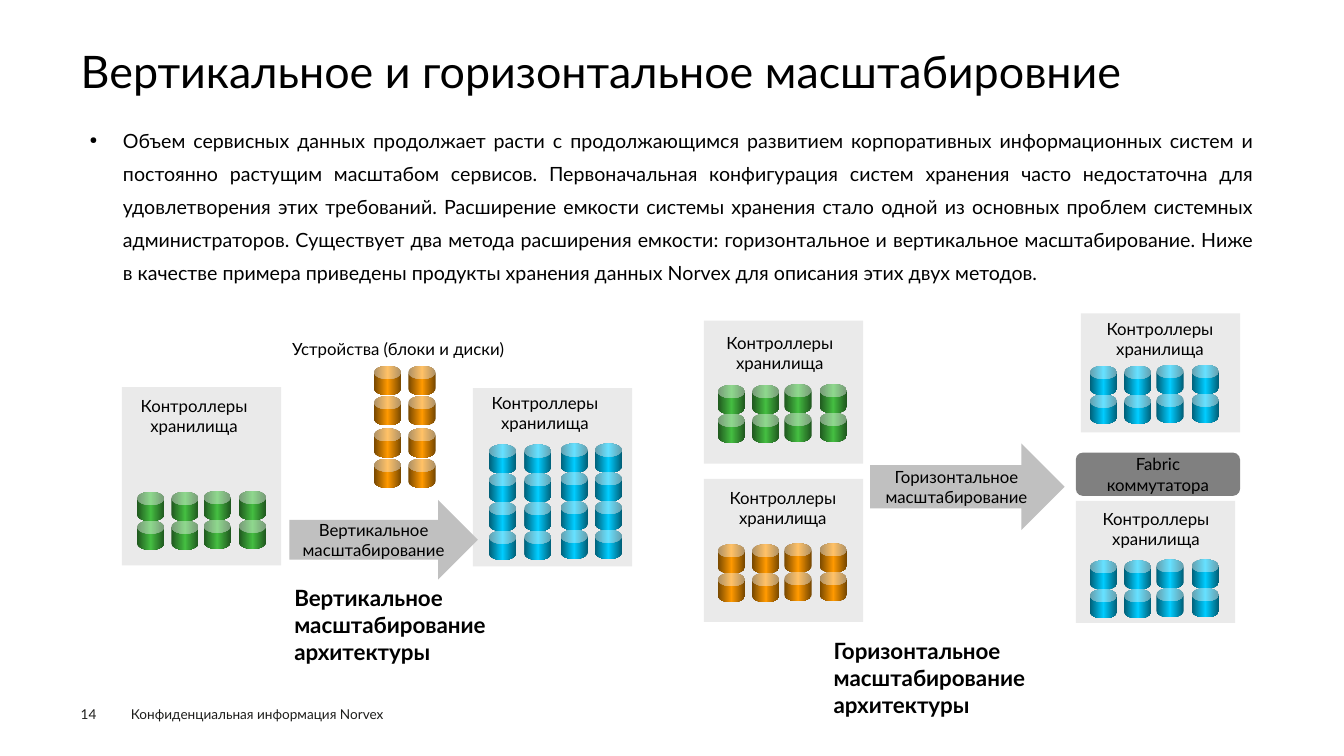
from copy import deepcopy

from lxml import etree
from pptx import Presentation
from pptx import util as u
from pptx.dml.color import RGBColor
from pptx.enum import shapes, text
from pptx.oxml.ns import qn

COLOURS = {
    "black": "000000", "footer": "1D1D1B", "panel": "EAEAEA", "arrow": "C0C0C0", "switch": "808080",
    "green": "44BD41", "dark green": "1F571E",
    "orange": "FF9900", "dark orange": "764700",
    "blue": "00CCFF", "dark blue": "005E76",
}
CONTROLLERS = "Контроллеры хранилища"
SUMMARY = (
    "Объем сервисных данных продолжает расти с продолжающимся развитием корпоративных "
    "информационных систем и постоянно растущим масштабом сервисов. Первоначальная конфигурация "
    "систем хранения часто недостаточна для удовлетворения этих требований. Расширение емкости "
    "системы хранения стало одной из основных проблем системных администраторов. Существует два "
    "метода расширения емкости: горизонтальное и вертикальное масштабирование. Ниже в качестве "
    "примера приведены продукты хранения данных Norvex для описания этих двух методов."
)
NARROW = (0, 0.34, 0.66, 1.01)
WIDE = (0, 0.35, 0.71, 1.05)
PANELS = [
    ((1.21, 3.84, 1.58, 1.77), (1.25, 3.88), (1.36, 4.88), NARROW, 2, "green"),
    ((4.69, 3.85, 1.58, 1.77), (4.73, 3.85), (4.85, 4.41), WIDE, 4, "blue"),
    ((6.98, 3.18, 1.58, 1.42), (7.06, 3.25), (7.12, 3.82), NARROW, 2, "green"),
    ((6.98, 4.75, 1.58, 1.42), (7.09, 4.79), (7.12, 5.4), NARROW, 2, "orange"),
    ((10.72, 3.11, 1.58, 1.18), (10.83, 3.11), (10.81, 3.63), NARROW, 2, "blue"),
    ((10.67, 4.97, 1.58, 1.21), (10.79, 5), (10.81, 5.56), NARROW, 2, "blue"),
]


def colour_of(name):
    """Return the named colour."""
    return RGBColor.from_string(COLOURS[name])


def write(frame, words, size=12, colour="black", bold=False, align="LEFT", anchor="TOP",
          insets=(0.1, 0.05), spacing=None, bullet=None):
    """Fill a text frame with one formatted paragraph."""
    frame.word_wrap = True
    frame.auto_size = text.MSO_AUTO_SIZE.NONE
    frame.vertical_anchor = getattr(text.MSO_ANCHOR, anchor)
    frame.margin_left = frame.margin_right = u.Inches(insets[0])
    frame.margin_top = frame.margin_bottom = u.Inches(insets[1])
    para = frame.paragraphs[0]
    para.alignment = getattr(text.PP_ALIGN, align)
    if spacing:
        para.line_spacing = spacing
    if bullet:
        properties = para._p.get_or_add_pPr()
        properties.set("marL", str(u.Inches(0.33)))
        properties.set("indent", str(u.Inches(-0.33)))
        etree.SubElement(properties, qn("a:buSzPct")).set("val", "50000")
        etree.SubElement(properties, qn("a:buChar")).set("char", bullet)
    span = para.add_run()
    span.text = words
    span.font.name = "Lato"
    span.font.size = u.Pt(size)
    span.font.bold = bold
    span.font.color.rgb = colour_of(colour)


class Page:
    """Draw styled elements on one slide."""

    def __init__(self, deck):
        """Add a title-only slide."""
        self.slide = deck.slides.add_slide(deck.slide_layouts[5])

    def title(self, words, place):
        """Place and format the title."""
        box = self.slide.shapes.title
        box.left, box.top, box.width, box.height = map(u.Inches, place)
        write(box.text_frame, words, size=32, insets=(0, 0), spacing=0.9)

    def label(self, words, place, **style):
        """Add a text box."""
        box = self.slide.shapes.add_textbox(*map(u.Inches, place))
        write(box.text_frame, words, **style)

    def block(self, kind, place, fill=None, words=None, **style):
        """Add a borderless preset shape, with optional fill and text."""
        box = self.slide.shapes.add_shape(getattr(shapes.MSO_SHAPE, kind), *map(u.Inches, place))
        box.shadow.inherit = False
        box.line.fill.background()
        if fill:
            box.fill.solid()
            box.fill.fore_color.rgb = colour_of(fill)
        if words:
            write(box.text_frame, words, align="CENTER", anchor="MIDDLE", **style)
        return box

    def disk(self, left, top, colour):
        """Add a cylinder shaded from its dark edges to a bright middle."""
        can = self.block("CAN", (left, top, 0.27, 0.29))
        can.adjustments[0] = 0.48
        can.fill.gradient()
        can.fill.gradient_angle = 0
        stops = can._element.spPr.find(".//" + qn("a:gsLst"))
        stops.append(deepcopy(stops[0]))
        shades = ("dark " + colour, colour, "dark " + colour)
        for stop, position, shade in zip(can.fill.gradient_stops, (0, 0.5, 1), shades):
            stop.position = position
            stop.color.rgb = colour_of(shade)

    def disks(self, left, top, columns, rows, colour, pitch=0.285):
        """Add a grid of disks whose right half sits slightly higher."""
        for row in range(rows):
            for index, offset in enumerate(columns):
                self.disk(left + offset, top + row * pitch - 0.01 * (index // 2), colour)

    def panel(self, place, label_at, disks_at, columns, rows, colour):
        """Add a storage controller panel with its disks."""
        self.block("RECTANGLE", place, "panel")
        self.disks(*disks_at, columns, rows, colour)
        self.label(CONTROLLERS, (*label_at, 1.35, 0.5), align="CENTER")


def main():
    """Build the scaling slide."""
    deck = Presentation()
    deck.slide_width, deck.slide_height = u.Inches(13.33), u.Inches(7.5)
    page = Page(deck)
    page.title("Вертикальное и горизонтальное масштабировние", (0.8, 0.49, 11.73, 0.54))
    page.label(SUMMARY, (0.8, 1.15, 11.73, 1.8), size=14, align="JUSTIFY",
               insets=(0.09, 0.04), spacing=1.4, bullet="●")
    for panel in PANELS:
        page.panel(*panel)
    for top in (3.63, 4.25):
        page.disks(3.71, top, NARROW[:2], 2, "orange", pitch=0.3)
    page.label("Устройства (блоки и диски)", (2.8, 3.31, 2.65, 0.3))
    page.block("RIGHT_ARROW", (2.87, 4.96, 1.87, 0.79), "arrow",
               "Вертикальное масштабирование", insets=(0, 0.05))
    page.block("RIGHT_ARROW", (8.63, 4.4, 1.93, 0.86), "arrow",
               "Горизонтальное масштабирование", insets=(0, 0.05))
    page.block("ROUNDED_RECTANGLE", (10.67, 4.49, 1.63, 0.43), "switch", "Fabric коммутатора")
    page.label("Вертикальное масштабирование архитектуры", (2.82, 5.75, 2.51, 0.9),
               size=16, bold=True)
    page.label("Горизонтальное масштабирование архитектуры", (8.17, 6.27, 2.6, 0.9),
               size=16, bold=True)
    page.label("14", (0.8, 7, 0.55, 0.16), size=9.7, colour="footer", insets=(0, 0))
    page.label("Конфиденциальная информация Norvex", (1.2, 6.95, 3.84, 0.26),
               size=9.7, colour="footer")
    deck.save("out.pptx")


if __name__ == "__main__":
    main()
